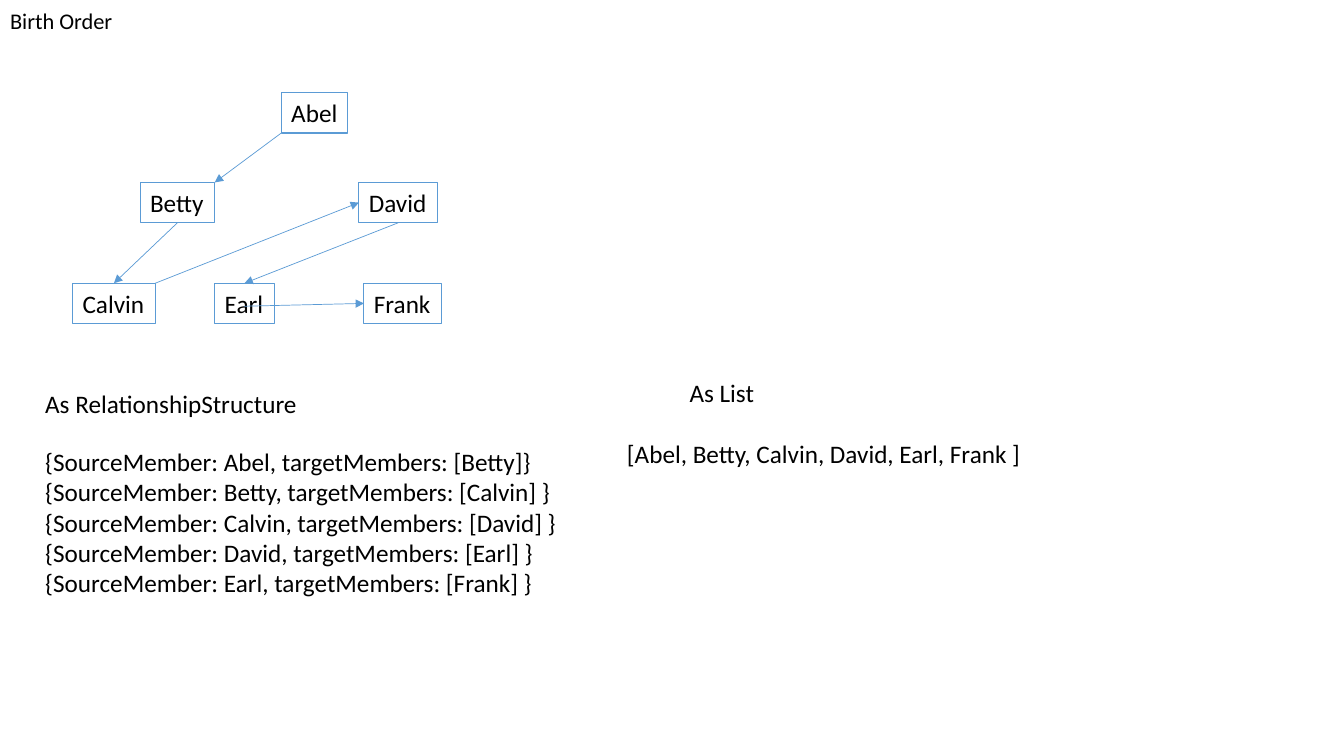
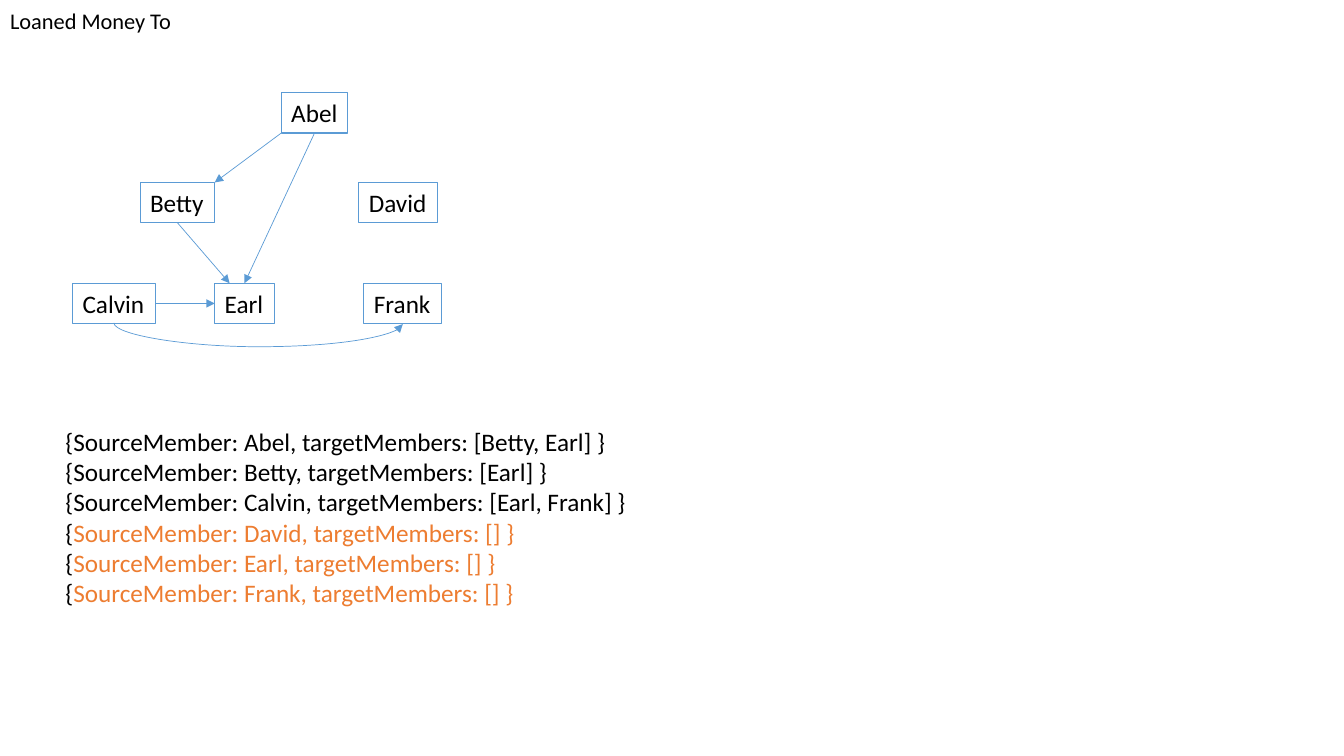
from pptx import Presentation, util as u
from pptx.dml.color import RGBColor
from pptx.enum import shapes, text
from pptx.oxml import ns, xmlchemy as xml

INK = RGBColor(0x00, 0x00, 0x00)
BLUE = RGBColor(0x5B, 0x9B, 0xD5)
ORANGE = RGBColor(0xED, 0x7D, 0x31)
FONT = "Calibri"
CELL = u.Inches(0.1)
BOX_ROWS = 4

PEOPLE = {
    "Abel": (27.9, 9.2, 6.6),
    "Betty": (13.9, 18.1, 7.4),
    "Calvin": (7.2, 28.1, 8.2),
    "David": (35.6, 18.1, 7.8),
    "Earl": (21.3, 28.1, 5.9),
    "Frank": (36.1, 28.1, 7.7),
}

TOP, BOTTOM, LEFT, RIGHT = (0.5, 0), (0.5, 1), (0, 0.5), (1, 0.5)
TOP_RIGHT, BOTTOM_LEFT = (1, 0), (0, 1)

BIRTH_ORDER = [
    ("Abel", BOTTOM_LEFT, "Betty", TOP_RIGHT),
    ("Betty", BOTTOM, "Calvin", TOP),
    ("Calvin", TOP_RIGHT, "David", LEFT),
    ("David", BOTTOM, "Earl", TOP),
    ("Earl", (0.5, 0.57), "Frank", LEFT),
]
LOANS = [
    ("Abel", BOTTOM_LEFT, "Betty", TOP_RIGHT),
    ("Betty", BOTTOM, "Earl", (0.25, 0)),
    ("Abel", BOTTOM, "Earl", TOP),
    ("Calvin", RIGHT, "Earl", LEFT),
]
BIRTH_RECORDS = [
    "{SourceMember: Abel, targetMembers: [Betty]}",
    "{SourceMember: Betty, targetMembers: [Calvin] }",
    "{SourceMember: Calvin, targetMembers: [David] }",
    "{SourceMember: David, targetMembers: [Earl] }",
    "{SourceMember: Earl, targetMembers: [Frank] }",
]
LOAN_RECORDS = [
    "{SourceMember: Abel, targetMembers: [Betty, Earl] }",
    "{SourceMember: Betty, targetMembers: [Earl] }",
    "{SourceMember: Calvin, targetMembers: [Earl, Frank] }",
]
EMPTY_RECORDS = [
    "SourceMember: David, targetMembers: [] }",
    "SourceMember: Earl, targetMembers: [] }",
    "SourceMember: Frank, targetMembers: [] }",
]


def cells(*counts):
    return [round(count * CELL) for count in counts]


def anchor(person, share):
    column, row, columns = PEOPLE[person]
    return column + share[0] * columns, row + share[1] * BOX_ROWS


class Deck:
    def __init__(self):
        self.prs = Presentation()
        self.prs.slide_width, self.prs.slide_height = u.Inches(13.33), u.Inches(7.5)
        self.slide = None

    def start(self, heading):
        self.slide = self.prs.slides.add_slide(self.prs.slide_layouts[5])
        title = self.slide.shapes.title
        title.left, title.top, title.width, title.height = cells(0, 0, 115, 4.4)
        frame = title.text_frame
        frame.text = heading
        frame.auto_size = text.MSO_AUTO_SIZE.NONE
        frame.vertical_anchor = text.MSO_ANCHOR.MIDDLE
        frame.paragraphs[0].line_spacing = 0.9
        self.style(frame.paragraphs[0], 16)

    def style(self, paragraph, size=18):
        paragraph.alignment = text.PP_ALIGN.LEFT
        for run in paragraph.runs:
            run.font.name, run.font.size = FONT, u.Pt(size)
            run.font.color.rgb = INK

    def fill_frame(self, frame, lines):
        frame.text = "\n".join(lines)
        frame.word_wrap = False
        frame.auto_size = text.MSO_AUTO_SIZE.SHAPE_TO_FIT_TEXT
        frame.vertical_anchor = text.MSO_ANCHOR.TOP
        for paragraph in frame.paragraphs:
            self.style(paragraph)

    def people(self):
        for person, (column, row, columns) in PEOPLE.items():
            box = self.slide.shapes.add_shape(
                shapes.MSO_SHAPE.RECTANGLE, *cells(column, row, columns, BOX_ROWS))
            box.shadow.inherit = False
            box.fill.background()
            box.line.color.rgb, box.line.width = BLUE, u.Pt(0.75)
            self.fill_frame(box.text_frame, [person])

    def label(self, lines, column, row, columns, rows=BOX_ROWS):
        block = self.slide.shapes.add_textbox(*cells(column, row, columns, rows))
        self.fill_frame(block.text_frame, lines)
        return block.text_frame

    def accent(self, paragraph, words):
        run = paragraph.add_run()
        run.text = words
        self.style(paragraph)
        run.font.color.rgb = ORANGE

    def arrow(self, start, end, kind=shapes.MSO_CONNECTOR.STRAIGHT):
        link = self.slide.shapes.add_connector(kind, *cells(*start, *end))
        link.line.color.rgb, link.line.width = BLUE, u.Pt(0.5)
        head = xml.OxmlElement("a:tailEnd")
        head.set("type", "triangle")
        link.line._get_or_add_ln().append(head)
        link._element.spPr.append(xml.OxmlElement("a:effectLst"))
        return link

    def arrows(self, relations):
        for source, leaving, target, entering in relations:
            self.arrow(anchor(source, leaving), anchor(target, entering))

    def arc_below(self, source, target, drop=2.4, thickness=0.12):
        (first, base), (last, _) = anchor(source, BOTTOM), anchor(target, BOTTOM)
        middle, reach = (first + last) / 2, (last - first) / 2
        arc = self.arrow((middle + thickness / 2, base - reach),
                         (middle - thickness / 2, base + reach),
                         shapes.MSO_CONNECTOR.CURVE)
        properties = arc._element.spPr
        properties.find(ns.qn("a:xfrm")).set("rot", str(270 * 60000))
        bend = xml.OxmlElement("a:gd")
        bend.set("name", "adj1")
        bend.set("fmla", f"val {round(drop / thickness * 100000)}")
        properties.find(ns.qn("a:prstGeom")).get_or_add_avLst().append(bend)


def main():
    deck = Deck()

    deck.start("Birth Order")
    deck.people()
    deck.arrows(BIRTH_ORDER)
    deck.label(BIRTH_RECORDS, 3.5, 43.8, 53.2, 19.2)
    deck.label(["As RelationshipStructure"], 3.5, 38, 27.3)
    deck.label(["As List"], 67.4, 36.9, 8.5)
    deck.label([f"[{', '.join(PEOPLE)} ]"], 61.2, 43, 41.5, 7.1)

    deck.start("Loaned Money To")
    deck.people()
    deck.arrows(LOANS)
    deck.arc_below("Calvin", "Frank")
    records = deck.label(LOAN_RECORDS + ["{"] * len(EMPTY_RECORDS), 5.5, 41.8, 58.2, 23)
    for paragraph, words in zip(records.paragraphs[len(LOAN_RECORDS):], EMPTY_RECORDS):
        deck.accent(paragraph, words)

    deck.prs.save("out.pptx")


if __name__ == "__main__":
    main()
